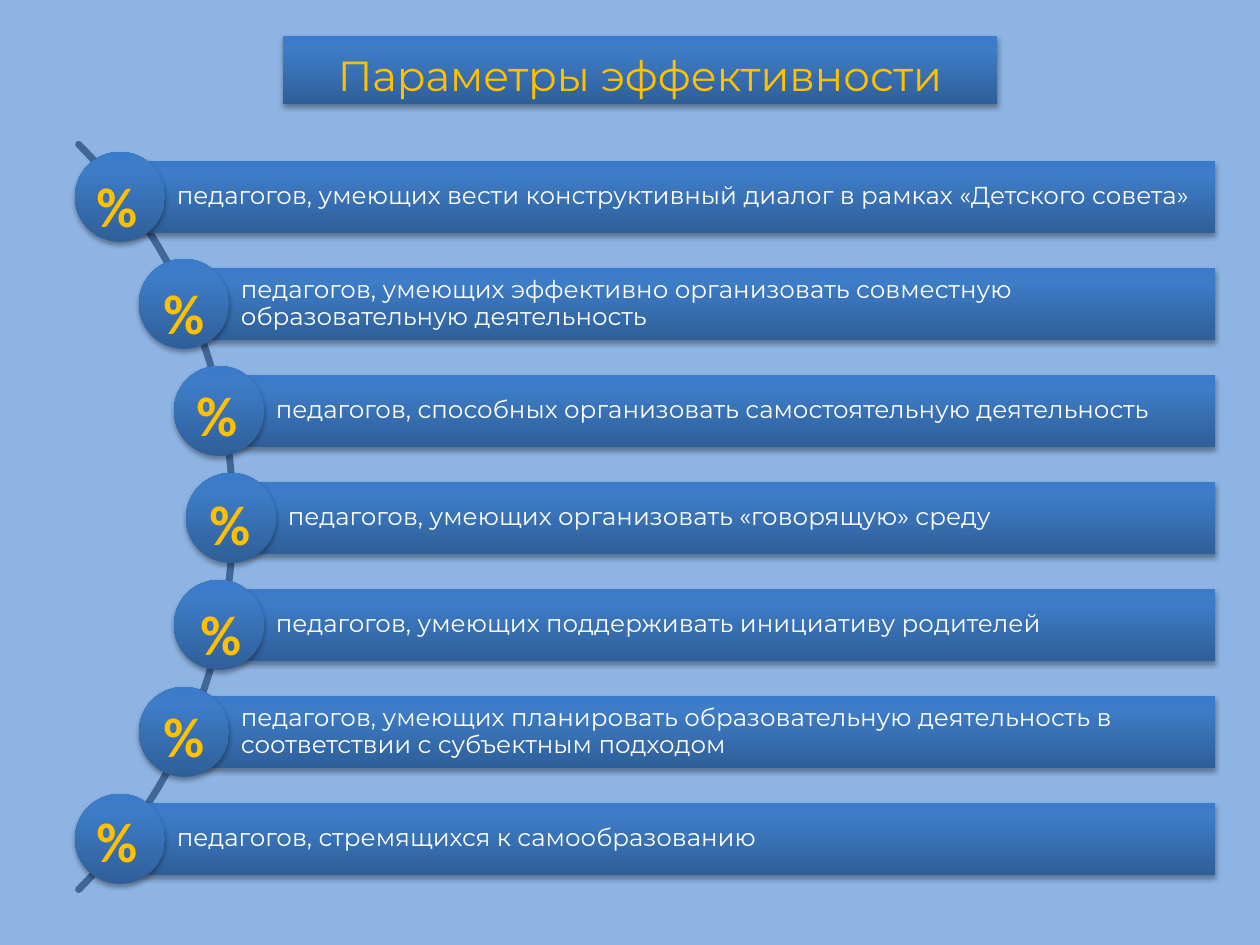
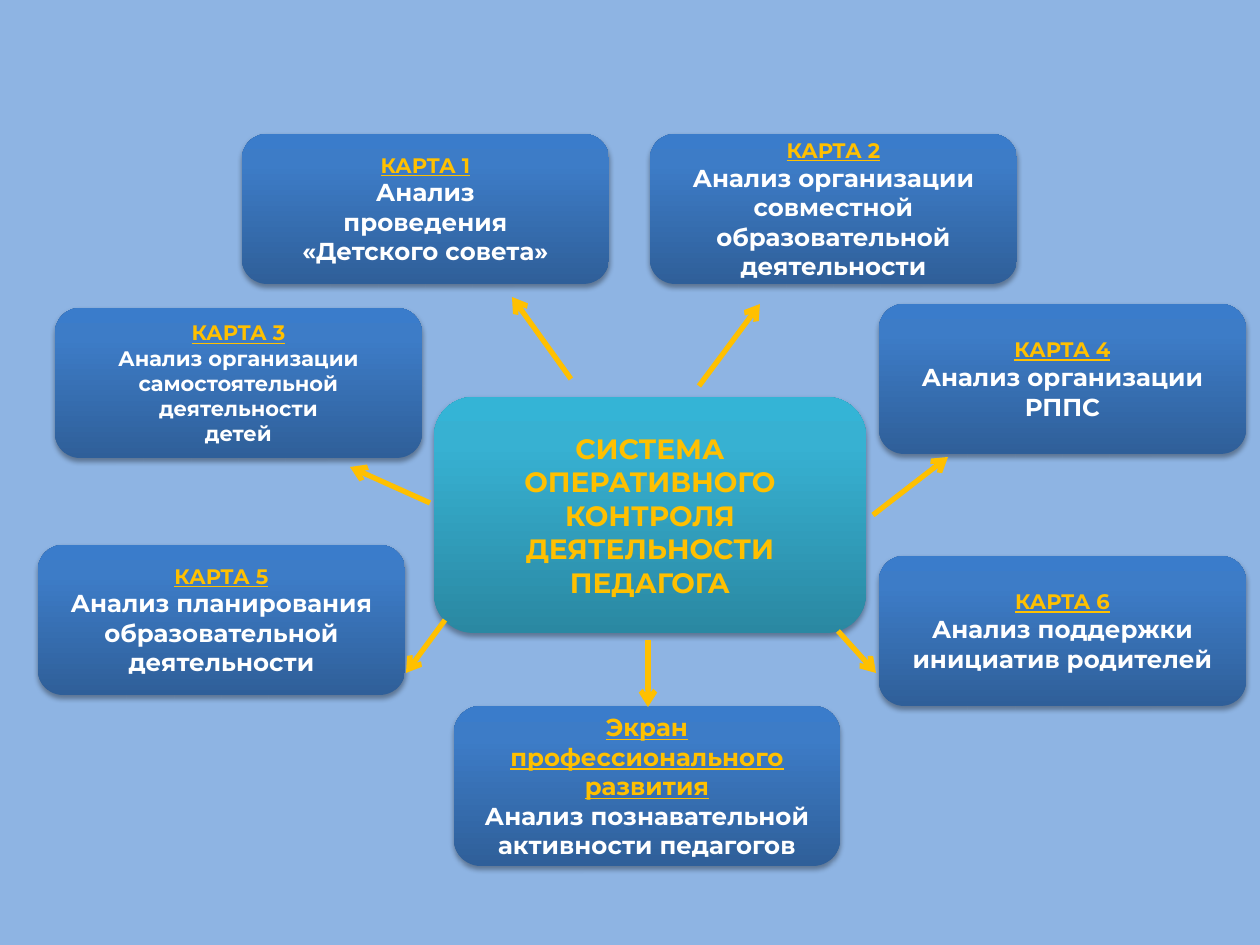
import math
from dataclasses import dataclass

from lxml import etree
from pptx import Presentation
from pptx import util as u
from pptx.dml import color
from pptx.enum import shapes, text
from pptx.oxml import ns

SCALE = 914400 / 126  # EMU in one px
KIND = shapes.MSO_SHAPE
ALIGN = text.PP_ALIGN
ANCHOR = text.MSO_ANCHOR


@dataclass(frozen=True)
class Theme:
    background: str = "8EB4E3"
    accent: str = "FFC000"
    light: str = "FFFFFF"
    arc: str = "3F6797"
    blue: tuple = ((0, "2F5F99"), (80, "3D7CC7"), (100, "3A7CCB"))
    teal: tuple = ((0, "2A88A2"), (80, "37B1D2"), (100, "34B4D6"))
    font: str = "Montserrat"
    sign_font: str = "Calibri"
    title: int = 24
    sign: int = 32
    hub: int = 16
    body: int = 14
    small: int = 12


T = Theme()

# Bar left, offset of the % sign from the bar's top left corner, wording
PARAMETERS = [
    (120, -36, -6, "педагогов, умеющих вести конструктивный диалог в рамках «Детского совета»"),
    (184, -33, -6, "педагогов, умеющих эффективно организовать совместную образовательную деятельность"),
    (219, -35, -11, "педагогов, способных организовать самостоятельную деятельность"),
    (231, -34, -9, "педагогов, умеющих организовать «говорящую» среду"),
    (219, -31, -6, "педагогов, умеющих поддерживать инициативу родителей"),
    (184, -33, -11, "педагогов, умеющих планировать образовательную деятельность в "
                    "соответствии с субъектным подходом"),
    (120, -36, -13, "педагогов, стремящихся к самообразованию"),
]

# Card box, heading and its size, body lines and their size, arrow from hub to card
CARD = (367, 150)
CARDS = [
    ((242, 134, *CARD), "КАРТА 1", T.small,
     ["Анализ", "проведения", "«Детского совета»"], T.body, (571, 379, 512, 297)),
    ((650, 134, *CARD), "КАРТА 2", T.small,
     ["Анализ организации совместной образовательной деятельности"], T.body,
     (699, 386, 760, 304)),
    ((55, 308, *CARD), "КАРТА 3", T.small,
     ["Анализ организации самостоятельной деятельности", "детей"], T.small,
     (430, 503, 350, 467)),
    ((879, 304, *CARD), "КАРТА 4", T.small,
     ["Анализ организации", "РППС"], T.body, (873, 515, 948, 457)),
    ((38, 545, *CARD), "КАРТА 5", T.small,
     ["Анализ планирования образовательной деятельности"], T.body,
     (445, 620, 406, 673)),
    ((879, 556, *CARD), "КАРТА 6", T.small,
     ["Анализ поддержки инициатив родителей"], T.body, (838, 631, 876, 673)),
    ((454, 706, 386, 160), "Экран профессионального развития", T.body,
     ["Анализ познавательной активности педагогов"], T.body, (648, 640, 648, 707)),
]


def px(*lengths):
    return [u.Emu(round(n * SCALE)) for n in lengths]


def rgb(value):
    return color.RGBColor.from_string(value)


def sub(parent, tag, **attrs):
    return etree.SubElement(parent, ns.qn(tag), {k: str(v) for k, v in attrs.items()})


# Shared looks
def paint(sp, stops):
    """Vertical gradient, no outline, soft shadow below."""
    sp.fill.gradient()
    sp.fill.gradient_angle = 90
    spPr = sp._element.spPr
    stop_list = spPr.find(".//" + ns.qn("a:gsLst"))
    for gs in list(stop_list):
        stop_list.remove(gs)
    for pos, value in stops:
        sub(sub(stop_list, "a:gs", pos=pos * 1000), "a:srgbClr", val=value)
    sp.line.fill.background()
    sp.shadow.inherit = False
    shadow = sub(spPr.find(ns.qn("a:effectLst")), "a:outerShdw", blurRad=u.Pt(3.1),
                 dist=u.Pt(1.8), dir=5400000, rotWithShape=0)
    sub(sub(shadow, "a:srgbClr", val="000000"), "a:alpha", val=35000)


def add_panel(s, kind, box, stops=T.blue):
    sp = s.shapes.add_shape(kind, *px(*box))
    paint(sp, stops)
    return sp


def add_run(p, words, size, ink, font=T.font, bold=False, underline=False):
    r = p.add_run()
    r.text = words
    f = r.font
    f.name, f.size, f.bold, f.underline = font, u.Pt(size), bold, underline
    f.color.rgb = rgb(ink)


def set_frame(sp, anchor, wrap=True):
    tf = sp.text_frame
    tf.word_wrap = wrap
    tf.vertical_anchor = anchor
    return tf


def set_paragraph(p, align, spacing=1.0):
    p.alignment = align
    p.line_spacing = spacing
    return p


# Slide 1: title, arc and rows
def add_title(s, box, words):
    sp = s.shapes.title
    sp.left, sp.top, sp.width, sp.height = px(*box)
    paint(sp, T.blue)
    tf = set_frame(sp, ANCHOR.TOP)
    tf.auto_size = text.MSO_AUTO_SIZE.NONE
    add_run(set_paragraph(tf.paragraphs[0], ALIGN.CENTER, 1.15), words, T.title, T.accent)


def add_arc(s, cx, cy, radius):
    points = [px(cx + radius * math.cos(math.radians(a)),
                 cy + radius * math.sin(math.radians(a))) for a in range(-45, 46)]
    builder = s.shapes.build_freeform(*points[0], scale=1.0)
    builder.add_line_segments(points[1:], close=False)
    sp = builder.convert_to_shape()
    sp.fill.background()
    sp.shadow.inherit = False
    sp.line.color.rgb = rgb(T.arc)
    sp.line.width = u.Pt(4)
    sp.line._get_or_add_ln().set("cap", "rnd")


def add_row(s, box, sign_dx, sign_dy, words):
    x, y, w, h = box
    # Bar
    bar = add_panel(s, KIND.RECTANGLE, box)
    tf = set_frame(bar, ANCHOR.MIDDLE)
    tf.margin_left, tf.margin_top, tf.margin_right, tf.margin_bottom = px(57, 5, 5, 5)
    add_run(set_paragraph(tf.paragraphs[0], ALIGN.LEFT, 0.9), words, T.body, T.light)
    # Disc centred on the bar's left edge
    disc = 90
    add_panel(s, KIND.OVAL, (x - disc / 2, y + (h - disc) / 2, disc, disc))
    # Sign
    sign = s.shapes.add_textbox(*px(x + sign_dx, y + sign_dy, 67, 86))
    tf = set_frame(sign, ANCHOR.TOP, wrap=False)
    tf.auto_size = text.MSO_AUTO_SIZE.SHAPE_TO_FIT_TEXT
    add_run(set_paragraph(tf.paragraphs[0], ALIGN.JUSTIFY, 1.15), "%", T.sign, T.accent,
            T.sign_font, bold=True)


def build_parameters(prs):
    s = prs.slides.add_slide(prs.slide_layouts[5])
    add_title(s, (283, 36, 714, 68), "Параметры эффективности")
    add_arc(s, -294, 517, 527)
    top, pitch, right, height = 161, 107, 1215, 72
    for i, (left, dx, dy, words) in enumerate(PARAMETERS):
        add_row(s, (left, top + i * pitch, right - left, height), dx, dy, words)


# Slide 2: hub, cards and arrows
def add_hub(s, box, words):
    tf = set_frame(add_panel(s, KIND.ROUNDED_RECTANGLE, box, T.teal), ANCHOR.MIDDLE)
    add_run(set_paragraph(tf.paragraphs[0], ALIGN.CENTER), words, T.hub, T.accent, bold=True)


def add_card(s, box, heading, heading_size, lines, size):
    tf = set_frame(add_panel(s, KIND.ROUNDED_RECTANGLE, box), ANCHOR.MIDDLE)
    p = set_paragraph(tf.paragraphs[0], ALIGN.CENTER)
    add_run(p, heading, heading_size, T.accent, bold=True, underline=True)
    for line in lines:
        p = set_paragraph(tf.add_paragraph(), ALIGN.CENTER)
        add_run(p, line, size, T.light, bold=True)


def add_arrow(s, ends):
    c = s.shapes.add_connector(shapes.MSO_CONNECTOR.STRAIGHT, *px(*ends))
    c.line.color.rgb = rgb(T.accent)
    c.line.width = u.Pt(3)
    sub(c.line._get_or_add_ln(), "a:tailEnd", type="arrow")
    sub(c._element.spPr, "a:effectLst")


def build_control_system(prs):
    s = prs.slides.add_slide(prs.slide_layouts[6])
    add_hub(s, (434, 397, 432, 236), "СИСТЕМА ОПЕРАТИВНОГО КОНТРОЛЯ ДЕЯТЕЛЬНОСТИ ПЕДАГОГА")
    for *card, _ in CARDS:
        add_card(s, *card)
    for *_, ends in CARDS:
        add_arrow(s, ends)


def main():
    prs = Presentation()
    prs.slide_width, prs.slide_height = px(1260, 945)
    fill = prs.slide_master.background.fill
    fill.solid()
    fill.fore_color.rgb = rgb(T.background)
    build_parameters(prs)
    build_control_system(prs)
    prs.save("out.pptx")


if __name__ == "__main__":
    main()
